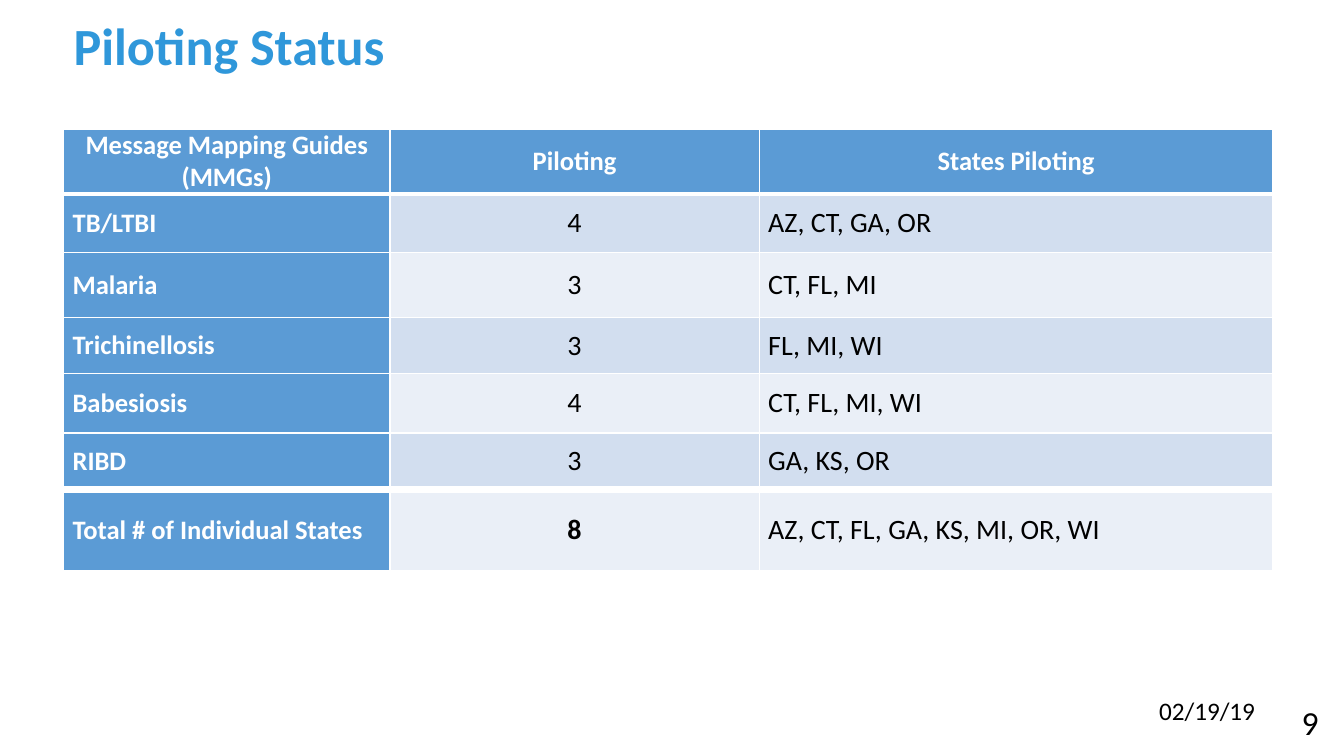
from lxml import etree
from pptx import Presentation
from pptx.dml.color import RGBColor
from pptx.enum import text as t
from pptx.oxml import ns
from pptx.util import Cm, Pt

WHITE = RGBColor(0xFF, 0xFF, 0xFF)
BLACK = RGBColor(0, 0, 0)
TITLE_BLUE = RGBColor(0x2F, 0x97, 0xDA)
HEAD_BLUE = RGBColor(0x5B, 0x9B, 0xD5)
BANDS = (RGBColor(0xD2, 0xDE, 0xEF), RGBColor(0xEA, 0xEF, 0xF7))

HEADINGS = ("Message Mapping Guides (MMGs)", "Piloting", "States Piloting")
PILOTS = (
    ("TB/LTBI", "4", "AZ, CT, GA, OR"),
    ("Malaria", "3", "CT, FL, MI"),
    ("Trichinellosis", "3", "FL, MI, WI"),
    ("Babesiosis", "4", "CT, FL, MI, WI"),
    ("RIBD", "3", "GA, KS, OR"),
)
TOTAL = ("Total # of Individual States", "8", "AZ, CT, FL, GA, KS, MI, OR, WI")
COLUMN_WIDTHS = (8.23, 9.3, 12.95)
ROW_HEIGHTS = (1.63, 1.47, 1.65, 1.4, 1.5, 1.42, 2.06)


class StatusSlide:
    font_name = "Calibri"

    def __init__(self, deck):
        self.slide = deck.slides.add_slide(deck.slide_layouts[5])

    def apply(self, target, values):
        for name, value in values.items():
            setattr(target, name, value)

    def add_wording(self, frame, wording, size, color, bold=False, **paragraph_format):
        paragraph = frame.paragraphs[0]
        self.apply(paragraph, paragraph_format)
        run = paragraph.add_run()
        run.text = wording
        self.apply(run.font, {"name": self.font_name, "size": Pt(size), "bold": bold})
        run.font.color.rgb = color

    def title(self, wording, left, top, width, height):
        heading = self.slide.shapes.title
        self.apply(heading, {"left": Cm(left), "top": Cm(top),
                             "width": Cm(width), "height": Cm(height)})
        self.apply(heading.text_frame, {"vertical_anchor": t.MSO_ANCHOR.BOTTOM,
                                        "word_wrap": True,
                                        "auto_size": t.MSO_AUTO_SIZE.NONE})
        self.add_wording(heading.text_frame, wording, 37.3, TITLE_BLUE, True,
                         alignment=t.PP_ALIGN.LEFT, line_spacing=Pt(40))

    def label(self, wording, left, top, width, height, size, alignment):
        frame = self.slide.shapes.add_textbox(
            Cm(left), Cm(top), Cm(width), Cm(height)).text_frame
        self.apply(frame, {"word_wrap": True,
                           "auto_size": t.MSO_AUTO_SIZE.SHAPE_TO_FIT_TEXT})
        self.add_wording(frame, wording, size, BLACK, alignment=alignment)

    def borders(self, cell, top, bottom):
        properties = cell._tc.get_or_add_tcPr()
        for side, points in (("L", 1), ("R", 1), ("T", top), ("B", bottom)):
            line = etree.SubElement(properties, ns.qn(f"a:ln{side}"), w=str(Pt(points)))
            fill = etree.SubElement(line, ns.qn("a:solidFill"))
            etree.SubElement(fill, ns.qn("a:srgbClr"), val=str(WHITE))

    def table(self, rows, left, top):
        table = self.slide.shapes.add_table(
            len(rows), len(COLUMN_WIDTHS), Cm(left), Cm(top),
            Cm(sum(COLUMN_WIDTHS)), Cm(sum(ROW_HEIGHTS))).table
        for column, width in zip(table.columns, COLUMN_WIDTHS):
            column.width = Cm(width)
        rules = [1, 3] + [1] * (len(rows) - 3) + [6, 1]
        for r, entries in enumerate(rows):
            table.rows[r].height = Cm(ROW_HEIGHTS[r])
            for c, wording in enumerate(entries):
                cell = table.cell(r, c)
                is_heading = r == 0 or c == 0
                is_total = r == len(rows) - 1 and c == 1
                centred = r == 0 or c == 1
                self.borders(cell, rules[r], rules[r + 1])
                cell.fill.solid()
                cell.fill.fore_color.rgb = HEAD_BLUE if is_heading else BANDS[(r - 1) % 2]
                self.apply(cell, {"vertical_anchor": t.MSO_ANCHOR.MIDDLE,
                                  "margin_left": Cm(0.23), "margin_right": Cm(0.23),
                                  "margin_top": 0, "margin_bottom": 0})
                self.add_wording(
                    cell.text_frame, wording, 19 if is_heading else 20,
                    WHITE if is_heading else BLACK, is_heading or is_total,
                    alignment=t.PP_ALIGN.CENTER if centred else t.PP_ALIGN.LEFT)


def main():
    deck = Presentation()
    deck.slide_width, deck.slide_height = Cm(33.87), Cm(19.05)
    status = StatusSlide(deck)
    status.title("Piloting Status", 1.6, 0.25, 30.48, 1.8)
    status.table((HEADINGS, *PILOTS, TOTAL), 1.6, 3.26)
    status.label("02/19/19", 28.96, 17.4, 3.1, 1.02, 18, t.PP_ALIGN.LEFT)
    status.label("9", 30.28, 17.55, 3.2, 1.27, 24, t.PP_ALIGN.RIGHT)
    deck.save("out.pptx")


if __name__ == "__main__":
    main()
